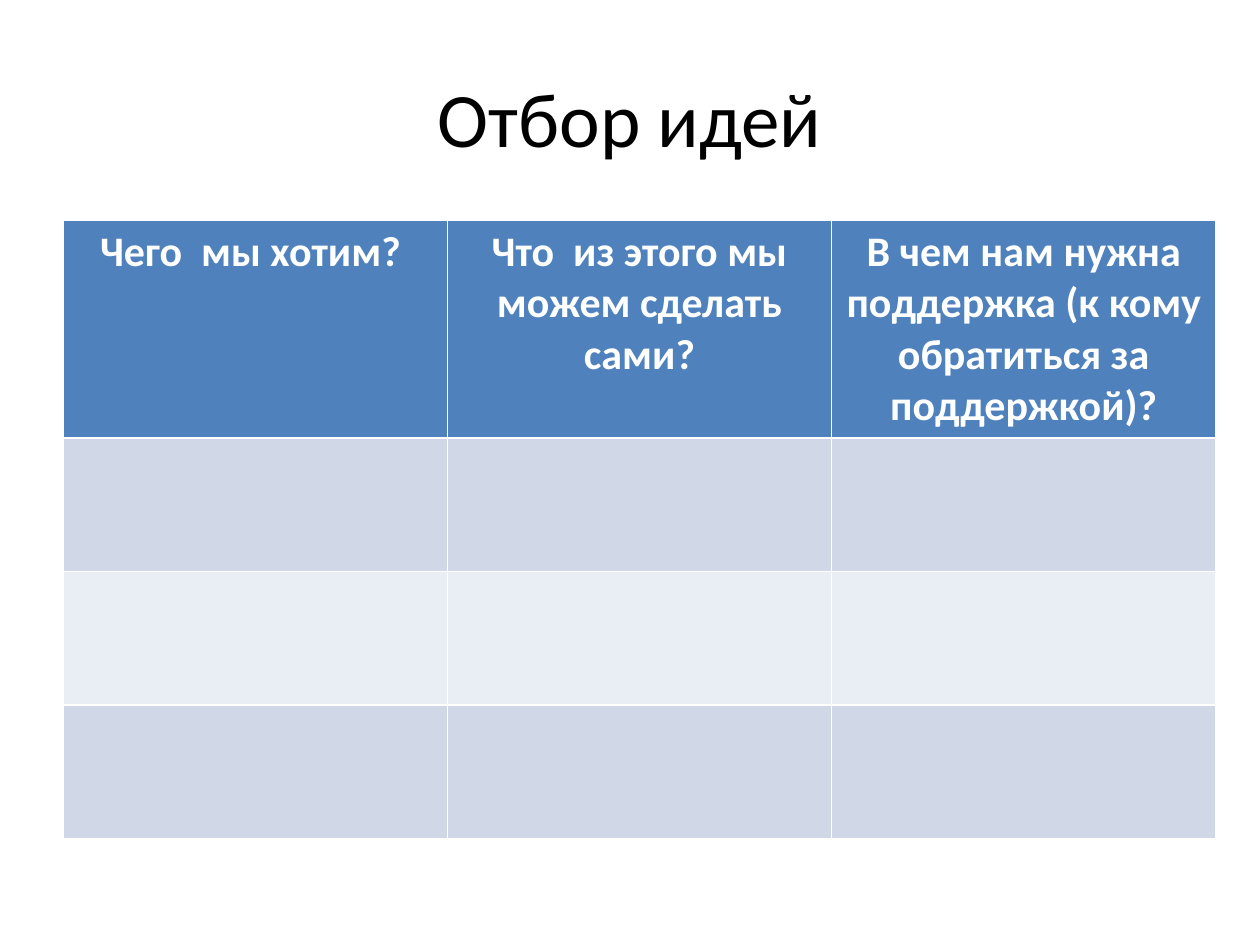
from pptx import Presentation
from pptx.dml.color import RGBColor
from pptx.enum import text
from pptx.util import Pt

HEADING = "Отбор идей"
QUESTIONS = [
    "Чего  мы хотим? ",
    "Что  из этого мы можем сделать сами?",
    "В чем нам нужна поддержка (к кому обратиться за поддержкой)?",
]
ANSWER_ROWS = 3

THEME = {
    "font": "Calibri",
    "heading": {"size": 44, "color": "000000", "bold": False},
    "question": {"size": 24, "color": "FFFFFF", "bold": True},
    "header_fill": "4F81BD",
    "bands": ["D0D8E8", "E9EDF4"],
}
SLIDE = {"slide_width": 720, "slide_height": 540}
HEADING_BOX = {"left": 36, "top": 21.6, "width": 648, "height": 90}
GRID_LEFT, GRID_TOP = 36, 126
COLUMN_WIDTH = 219.6
HEADER_HEIGHT, ANSWER_HEIGHT = 98.64, 76.32


def place(target, lengths):
    for name, points in lengths.items():
        setattr(target, name, Pt(points))


def write(frame, words, style):
    paragraph = frame.paragraphs[0]
    paragraph.alignment = text.PP_ALIGN.CENTER
    run = paragraph.add_run()
    run.text = words
    formats = {"name": THEME["font"], "size": Pt(style["size"]), "bold": style["bold"]}
    for name, value in formats.items():
        setattr(run.font, name, value)
    run.font.color.rgb = RGBColor.from_string(style["color"])


def add_heading(slide):
    heading = slide.shapes.title
    place(heading, HEADING_BOX)
    heading.text_frame.vertical_anchor = text.MSO_ANCHOR.MIDDLE
    write(heading.text_frame, HEADING, THEME["heading"])


def add_idea_grid(slide):
    heights = [HEADER_HEIGHT] + [ANSWER_HEIGHT] * ANSWER_ROWS
    bands = THEME["bands"]
    fills = [THEME["header_fill"]] + [bands[i % len(bands)] for i in range(ANSWER_ROWS)]
    grid = slide.shapes.add_table(
        len(heights), len(QUESTIONS), Pt(GRID_LEFT), Pt(GRID_TOP),
        Pt(COLUMN_WIDTH * len(QUESTIONS)), Pt(sum(heights)),
    ).table
    for column in grid.columns:
        column.width = Pt(COLUMN_WIDTH)
    for row, height, fill in zip(grid.rows, heights, fills):
        row.height = Pt(height)
        for cell in row.cells:
            cell.fill.solid()
            cell.fill.fore_color.rgb = RGBColor.from_string(fill)
    for cell, question in zip(grid.rows[0].cells, QUESTIONS):
        write(cell.text_frame, question, THEME["question"])


def main():
    deck = Presentation()
    place(deck, SLIDE)
    slide = deck.slides.add_slide(deck.slide_layouts[5])
    add_heading(slide)
    add_idea_grid(slide)
    deck.save("out.pptx")


if __name__ == "__main__":
    main()
